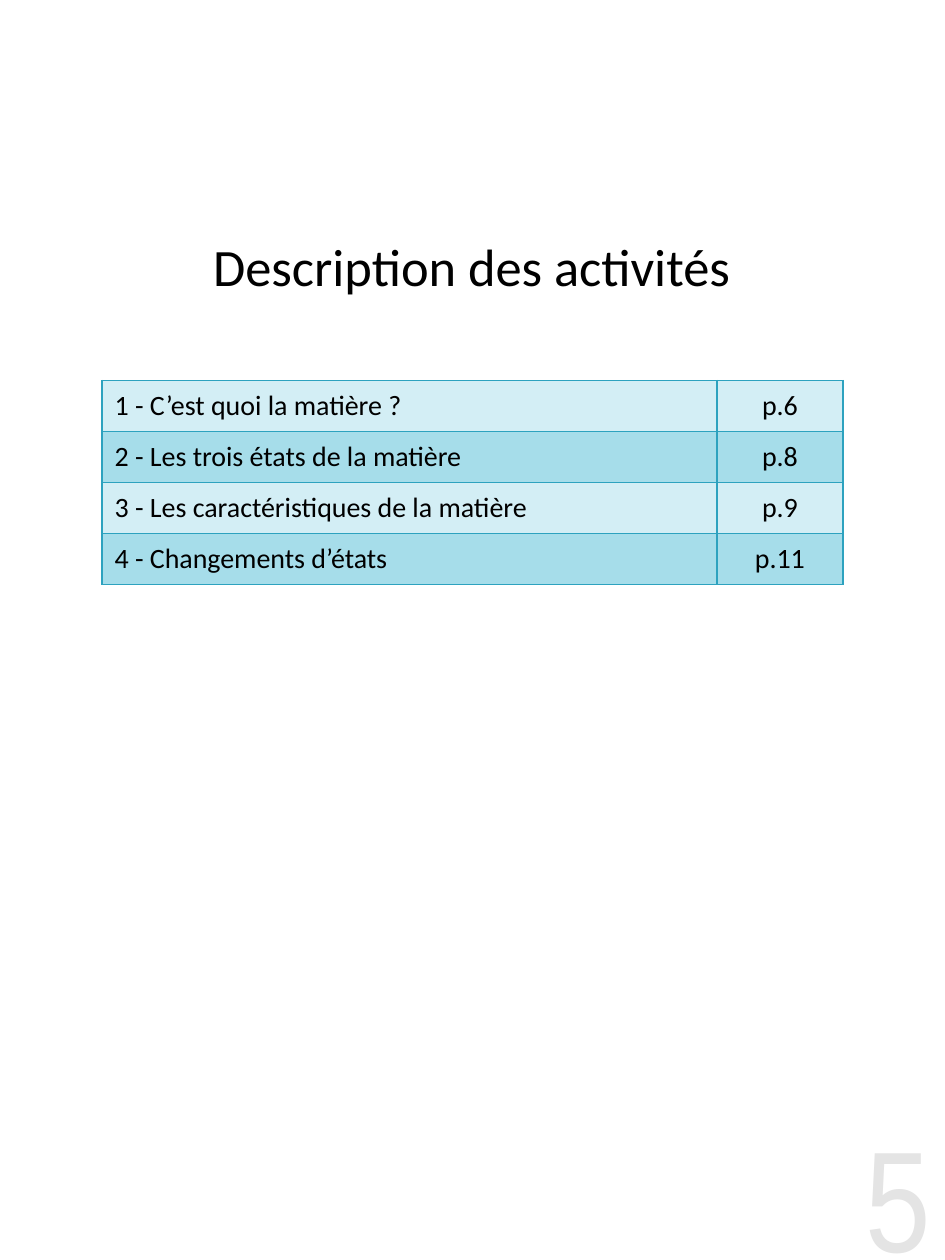
from dataclasses import dataclass, field

from lxml import etree
from pptx import Presentation, util as u
from pptx.dml.color import RGBColor
from pptx.enum import text
from pptx.oxml.ns import qn

COLORS = {
    "text": "000000",
    "border": "2DA2BF",
    "light": "D3EEF5",
    "dark": "A6DDEA",
    "page": "E4E4E4",
}
ACTIVITIES = [
    ("1 - C’est quoi la matière ?", "p.6"),
    ("2 - Les trois états de la matière", "p.8"),
    ("3 - Les caractéristiques de la matière", "p.9"),
    ("4 - Changements d’états", "p.11"),
]
LEFT, CENTER = text.PP_ALIGN.LEFT, text.PP_ALIGN.CENTER
TOP, MIDDLE = text.MSO_ANCHOR.TOP, text.MSO_ANCHOR.MIDDLE


def write(frame, content, size=16, font="Calibri", color="text", align=LEFT):
    paragraph = frame.paragraphs[0]
    paragraph.alignment = align
    run = paragraph.add_run()
    run.text = content
    run.font.size = u.Pt(size)
    run.font.name = font
    run.font.color.rgb = RGBColor.from_string(COLORS[color])


def add_borders(cell, color="border", width=1):
    properties = cell._tc.get_or_add_tcPr()
    for index, side in enumerate(("lnL", "lnR", "lnT", "lnB")):
        line = etree.Element(qn(f"a:{side}"), w=str(u.Pt(width)))
        fill = etree.SubElement(line, qn("a:solidFill"))
        etree.SubElement(fill, qn("a:srgbClr"), val=COLORS[color])
        properties.insert(index, line)


@dataclass
class ContentsPage:
    """Holds the slide and the shared style of its elements."""

    slide: object
    margin: float = 0.1
    row_fills: tuple = field(default=("light", "dark"))

    def add_text(self, content, left, top, width, height, anchor=MIDDLE, **style):
        shape = self.slide.shapes.add_textbox(*map(u.Inches, (left, top, width, height)))
        frame = shape.text_frame
        frame.word_wrap = True
        frame.vertical_anchor = anchor
        frame.margin_left = frame.margin_right = 0
        frame.margin_top = frame.margin_bottom = 0
        write(frame, content, align=CENTER, **style)

    def add_table(self, rows, left, top, widths, row_height):
        size = (left, top, sum(widths), row_height * len(rows))
        shape = self.slide.shapes.add_table(len(rows), len(widths), *map(u.Inches, size))
        table = shape.table
        table.first_row = table.horz_banding = False
        for column, width in zip(table.columns, widths):
            column.width = u.Inches(width)
        for row_index, values in enumerate(rows):
            table.rows[row_index].height = u.Inches(row_height)
            fill = COLORS[self.row_fills[row_index % 2]]
            for column_index, value in enumerate(values):
                cell = table.cell(row_index, column_index)
                cell.vertical_anchor = MIDDLE
                cell.margin_left = cell.margin_right = u.Inches(self.margin)
                cell.fill.solid()
                cell.fill.fore_color.rgb = RGBColor.from_string(fill)
                add_borders(cell)
                write(cell.text_frame, value, align=CENTER if column_index else LEFT)


def main():
    presentation = Presentation()
    presentation.slide_width = u.Inches(7.5)
    presentation.slide_height = u.Inches(10)
    page = ContentsPage(presentation.slides.add_slide(presentation.slide_layouts[6]))
    page.add_text("Description des activités", 1.41, 1.69, 4.67, 0.84, size=30)
    page.add_table(ACTIVITIES, 0.81, 3.02, (4.88, 1), 0.405)
    page.add_text("5", 6.78, 8.8, 0.7, 1.2, anchor=TOP, size=82,
                  font="Arial Narrow", color="page")
    presentation.save("out.pptx")


if __name__ == "__main__":
    main()
